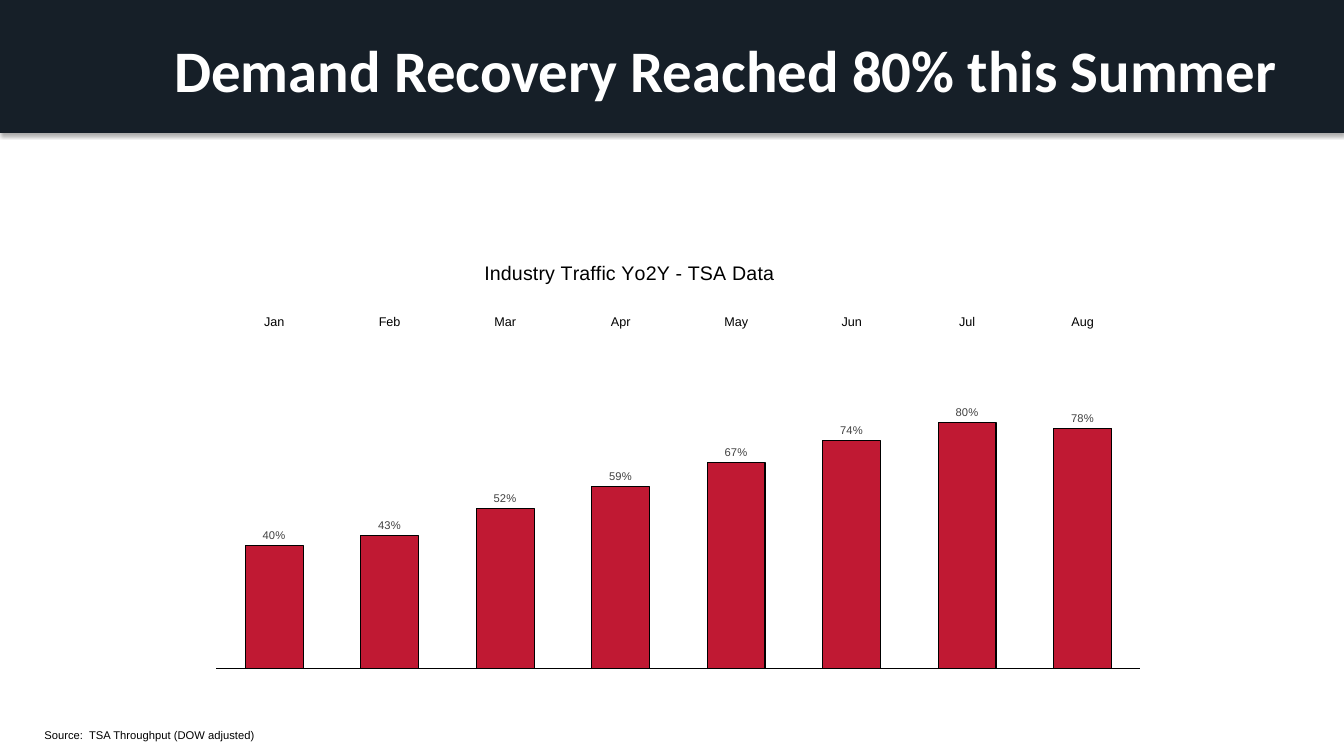
from lxml import etree
from pptx import Presentation
from pptx.chart import data as d
from pptx.dml import color as c
from pptx.enum import chart as ch, shapes, text
from pptx.oxml import ns, parse_xml
from pptx.util import Pt


def colour(value):
    return c.RGBColor.from_string(value)


class Page:
    """Draws styled elements on one slide, with lengths in points."""

    ink, red, navy, grey, white = "000000", "C01933", "161F28", "404040", "FFFFFF"

    def __init__(self, deck):
        self.page = deck.slides.add_slide(deck.slide_layouts[6])

    def style(self, font, size, value, name="Arial", bold=False):
        font.name, font.size, font.bold = name, Pt(size), bold
        font.color.rgb = colour(value)

    def banner(self, left, top, width, height):
        shape = self.page.shapes.add_shape(
            shapes.MSO_SHAPE.RECTANGLE, *map(Pt, (left, top, width, height)))
        shape.fill.solid()
        shape.fill.fore_color.rgb = colour(self.navy)
        shape.line.fill.background()
        shape.shadow.inherit = False
        effects = shape.element.spPr.find(ns.qn("a:effectLst"))
        effects.append(parse_xml(
            f'<a:outerShdw {ns.nsdecls("a")} blurRad="{Pt(3.1)}" dist="{Pt(1.8)}" '
            'dir="5400000" rotWithShape="0"><a:srgbClr val="000000">'
            '<a:alpha val="35000"/></a:srgbClr></a:outerShdw>'))

    def label(self, words, left, top, width, height, size, value, name="Arial",
              bold=False, inset=None, anchor=text.MSO_ANCHOR.TOP):
        box = self.page.shapes.add_textbox(*map(Pt, (left, top, width, height)))
        frame = box.text_frame
        frame.text = words
        frame.word_wrap = True
        frame.vertical_anchor = anchor
        if inset is not None:
            frame.margin_left = frame.margin_right = Pt(inset)
            frame.margin_top = frame.margin_bottom = Pt(inset)
        for span in frame.paragraphs[0].runs:
            self.style(span.font, size, value, name, bold)

    def place(self, parent, index, **settings):
        layout = parent.find(ns.qn("c:layout"))
        if layout is None:
            layout = etree.Element(ns.qn("c:layout"))
            parent.insert(index, layout)
        manual = etree.SubElement(layout, ns.qn("c:manualLayout"))
        for tag, value in settings.items():
            etree.SubElement(manual, ns.qn(f"c:{tag}")).set("val", str(value))

    def outline(self, line):
        line.color.rgb = colour(self.ink)
        line.width = Pt(0.75)

    def columns(self, title, months, values, left, top, width, height):
        data = d.CategoryChartData()
        data.categories = months
        data.add_series("Series 1", values)
        chart = self.page.shapes.add_chart(
            ch.XL_CHART_TYPE.COLUMN_CLUSTERED,
            *map(Pt, (left, top, width, height)), data).chart
        self.style(chart.font, 10, self.ink, "Calibri")
        chart.has_legend = False

        chart.has_title = True
        chart.chart_title.text_frame.text = title
        for span in chart.chart_title.text_frame.paragraphs[0].runs:
            self.style(span.font, 14, self.ink)
        self.place(chart.chart_title.element, 1,
                   xMode="edge", yMode="edge", x=0.3, y=0.01)
        self.place(chart.element.find(".//" + ns.qn("c:plotArea")), 0,
                   layoutTarget="inner", xMode="edge", yMode="edge",
                   x=0.024, y=0.207, w=0.965, h=0.79)

        months_axis = chart.category_axis
        months_axis.major_tick_mark = ch.XL_TICK_MARK.NONE
        months_axis.tick_label_position = ch.XL_TICK_LABEL_POSITION.HIGH
        self.style(months_axis.tick_labels.font, 9, self.ink)
        self.outline(months_axis.format.line)

        share_axis = chart.value_axis
        share_axis.minimum_scale, share_axis.maximum_scale = 0, 1.07
        share_axis.has_major_gridlines = False
        share_axis.tick_labels.number_format = "0.0%"
        share_axis.tick_labels.number_format_is_linked = False
        share_axis.visible = False

        plot = chart.plots[0]
        plot.gap_width, plot.overlap = 100, -27
        plot.vary_by_categories = False
        series = plot.series[0]
        series.format.fill.solid()
        series.format.fill.fore_color.rgb = colour(self.red)
        self.outline(series.format.line)
        labels = series.data_labels
        labels.show_value = True
        labels.position = ch.XL_LABEL_POSITION.OUTSIDE_END
        labels.number_format = r"0%;[Red]\(0%\);"
        labels.number_format_is_linked = False
        self.style(labels.font, 8, self.grey)


def main():
    deck = Presentation()
    deck.slide_width, deck.slide_height = Pt(960), Pt(540)
    page = Page(deck)
    page.banner(0, 0, 960, 95)
    page.label("Demand Recovery Reached 80% this Summer", 117.4, 20.2, 836, 58.3,
               42, page.white, "Calibri", bold=True)
    page.label("Source:  TSA Throughput (DOW adjusted)", 31.7, 512, 179.3, 26,
               8, page.ink, inset=0, anchor=text.MSO_ANCHOR.MIDDLE)
    page.columns("Industry Traffic Yo2Y - TSA Data",
                 ["Jan", "Feb", "Mar", "Apr", "May", "Jun", "Jul", "Aug"],
                 [0.4, 0.43, 0.52, 0.59, 0.67, 0.74, 0.8, 0.78],
                 138.2, 180.7, 684, 297.4)
    deck.save("out.pptx")


if __name__ == "__main__":
    main()
